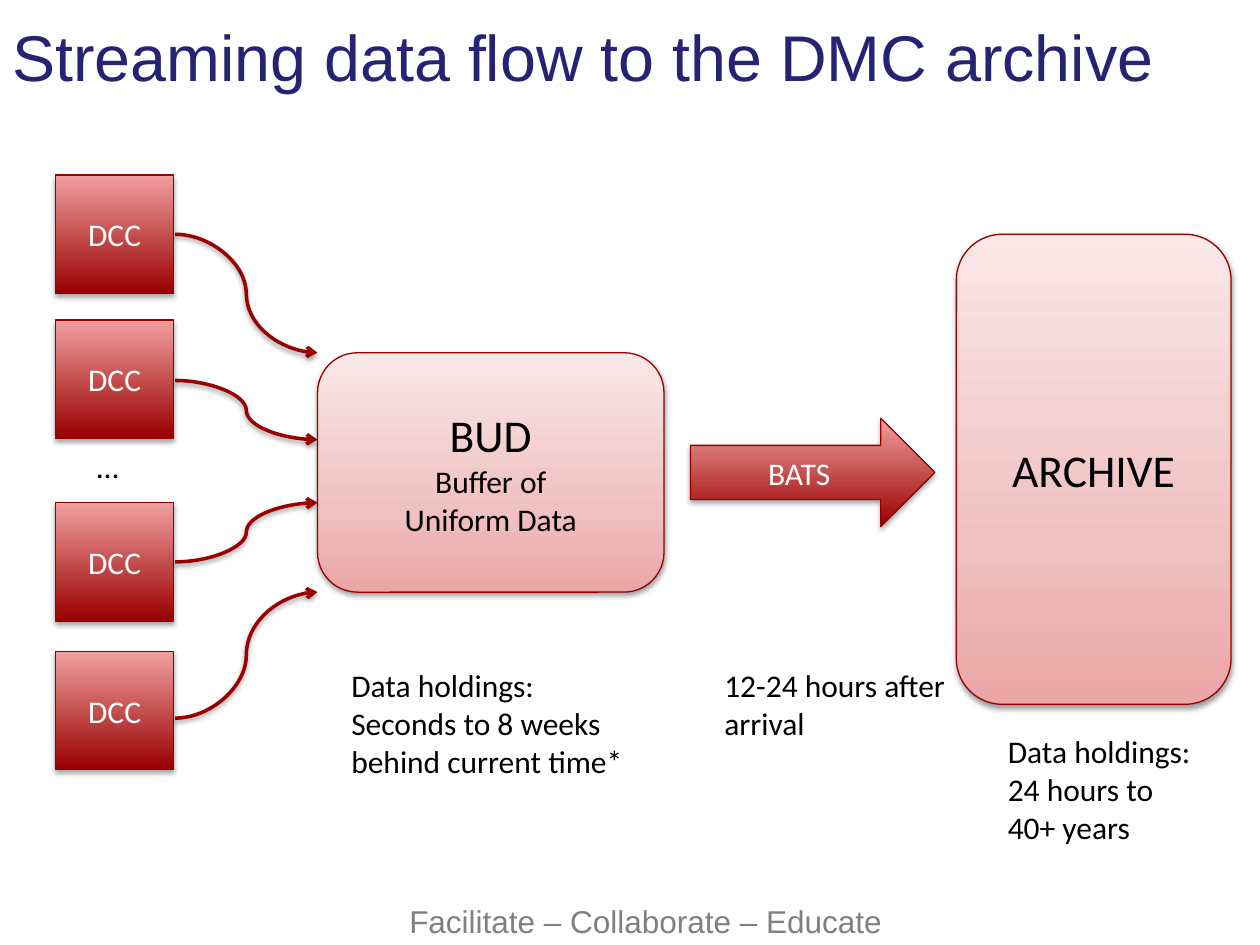
"""Build the slide on streaming data flow to the archive."""
import copy

import pptx
import pptx.util
import pptx.dml.color
import pptx.enum.shapes
import pptx.enum.text
import pptx.oxml
import pptx.oxml.ns

Inches, Pt = pptx.util.Inches, pptx.util.Pt
KIND = pptx.enum.shapes.MSO_SHAPE
ALIGN = pptx.enum.text.PP_ALIGN
qn = pptx.oxml.ns.qn

THEME = {
    "head": ("Arial", 36.9, "272273"),
    "foot": ("Arial", 18, "808080"),
    "big": ("Calibri", 26, "000000"),
    "body": ("Calibri", 18, "000000"),
    "light": ("Calibri", 18, "FFFFFF"),
    "edge": "960000",
    "flow": "990000",
    "dark": [(0, "990000"), (1, "F19F9F")],
    "pale": [(0, "EBA5A5"), (0.35, "F0C1C1"), (1, "FAE7E7")],
    "strong": (35, 1.8),
    "soft": (38, 1.6),
}

SIDE, LEFT = 0.94, 0.44
TOPS = [2.54, 1.39, 5.17, 3.99]
BLOCKS = [
    (KIND.ROUNDED_RECTANGLE, (2.52, 2.8, 2.75, 1.9), "pale", "soft",
     [("BUD", "big"), ("Buffer of", "body"), ("Uniform Data", "body")]),
    (KIND.ROUNDED_RECTANGLE, (7.59, 1.86, 2.18, 3.73), "pale", "soft",
     [("ARCHIVE", "big")]),
    (KIND.RIGHT_ARROW, (5.48, 3.32, 1.94, 0.86), "dark", "strong",
     [("BATS", "light")]),
] + [
    (KIND.RECTANGLE, (LEFT, top, SIDE, SIDE), "dark", "strong",
     [("DCC", "light")]) for top in TOPS
]
START, END = 1.39, 2.52
FLOWS = [(1.86, 2.8), (3.02, 3.49), (4.46, 3.99), (5.7, 4.7)]
HEAD = ((0, -0.18, 9.77, 1.25), ["Streaming data flow to the DMC archive"])
FOOT = ((3.15, 7.11, 7.65, 0.4), ["Facilitate – Collaborate – Educate"])
DOTS = ((0.67, 3.5, 0.45, 0.4), ["…"])
NOTES = [
    ((2.69, 5.24, 2.46, 1.01),
     ["Data holdings:", "Seconds to 8 weeks", "behind current time*"]),
    ((5.65, 5.24, 2.12, 0.71), ["12-24 hours after", "arrival"]),
    ((7.9, 5.76, 1.82, 1.01),
     ["Data holdings:", "24 hours to", "40+ years"]),
]


def tint(code):
    return pptx.dml.color.RGBColor.from_string(code)


def write(frame, lines, align=ALIGN.LEFT):
    frame.text = "\n".join(text for text, _ in lines)
    for para, (_, look) in zip(frame.paragraphs, lines):
        para.alignment = align
        font = para.runs[0].font
        font.name, size, code = THEME[look]
        font.size, font.color.rgb = Pt(size), tint(code)


def shade(shape, look):
    alpha, dist = THEME[look]
    shape._element.spPr.append(pptx.oxml.parse_xml(
        f'<a:effectLst {pptx.oxml.ns.nsdecls("a")}>'
        f'<a:outerShdw blurRad="{Pt(3.1)}" dist="{Pt(dist)}" dir="5400000" '
        'rotWithShape="0"><a:srgbClr val="000000">'
        f'<a:alpha val="{alpha * 1000}"/></a:srgbClr>'
        '</a:outerShdw></a:effectLst>'))


def blend(shape, stops):
    fill = shape.fill
    fill.gradient()
    fill.gradient_angle = 90
    group = shape._element.spPr.find(".//" + qn("a:gsLst"))
    for _ in stops[2:]:
        group.append(copy.deepcopy(group[0]))
    for stop, (place, code) in zip(fill.gradient_stops, stops):
        stop.color.rgb, stop.position = tint(code), place


def stroke(line, code, width):
    line.color.rgb, line.width = tint(code), Pt(width)


def block(slide, kind, area, fill, cast, lines):
    shape = slide.shapes.add_shape(kind, *map(Inches, area))
    blend(shape, THEME[fill])
    stroke(shape.line, THEME["edge"], 0.75)
    shade(shape, cast)
    shape.text_frame.vertical_anchor = pptx.enum.text.MSO_ANCHOR.MIDDLE
    write(shape.text_frame, lines, ALIGN.CENTER)


def label(slide, area, lines, look="body", wrap=True):
    frame = slide.shapes.add_textbox(*map(Inches, area)).text_frame
    frame.word_wrap = wrap
    frame.auto_size = pptx.enum.text.MSO_AUTO_SIZE.SHAPE_TO_FIT_TEXT
    write(frame, [(text, look) for text in lines])
    return frame


def flow(slide, start, end):
    link = slide.shapes.add_connector(
        pptx.enum.shapes.MSO_CONNECTOR.CURVE,
        *map(Inches, (START, start, END, end)))
    stroke(link.line, THEME["flow"], 2)
    tip = pptx.oxml.parse_xml(
        f'<a:tailEnd {pptx.oxml.ns.nsdecls("a")} type="arrow"/>')
    link._element.spPr.find(qn("a:ln")).append(tip)
    shade(link, "soft")


def main():
    deck = pptx.Presentation()
    deck.slide_width, deck.slide_height = Inches(10), Inches(7.5)
    slide = deck.slides.add_slide(deck.slide_layouts[6])
    label(slide, *FOOT, "foot")
    head = label(slide, *HEAD, "head")
    head.auto_size = pptx.enum.text.MSO_AUTO_SIZE.NONE
    head.vertical_anchor = pptx.enum.text.MSO_ANCHOR.MIDDLE
    for item in BLOCKS:
        block(slide, *item)
    label(slide, *DOTS)
    for pair in FLOWS:
        flow(slide, *pair)
    for note in NOTES:
        label(slide, *note, wrap=False)
    deck.save("out.pptx")


if __name__ == "__main__":
    main()
